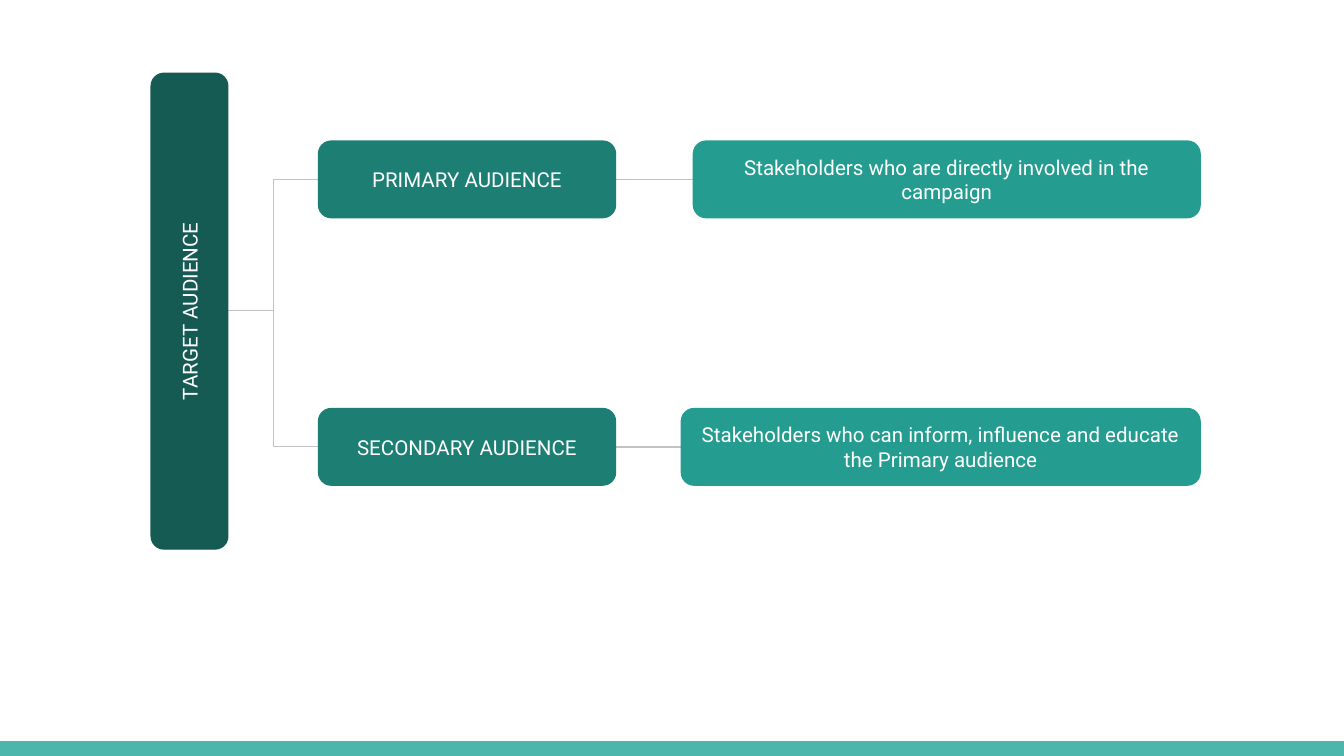
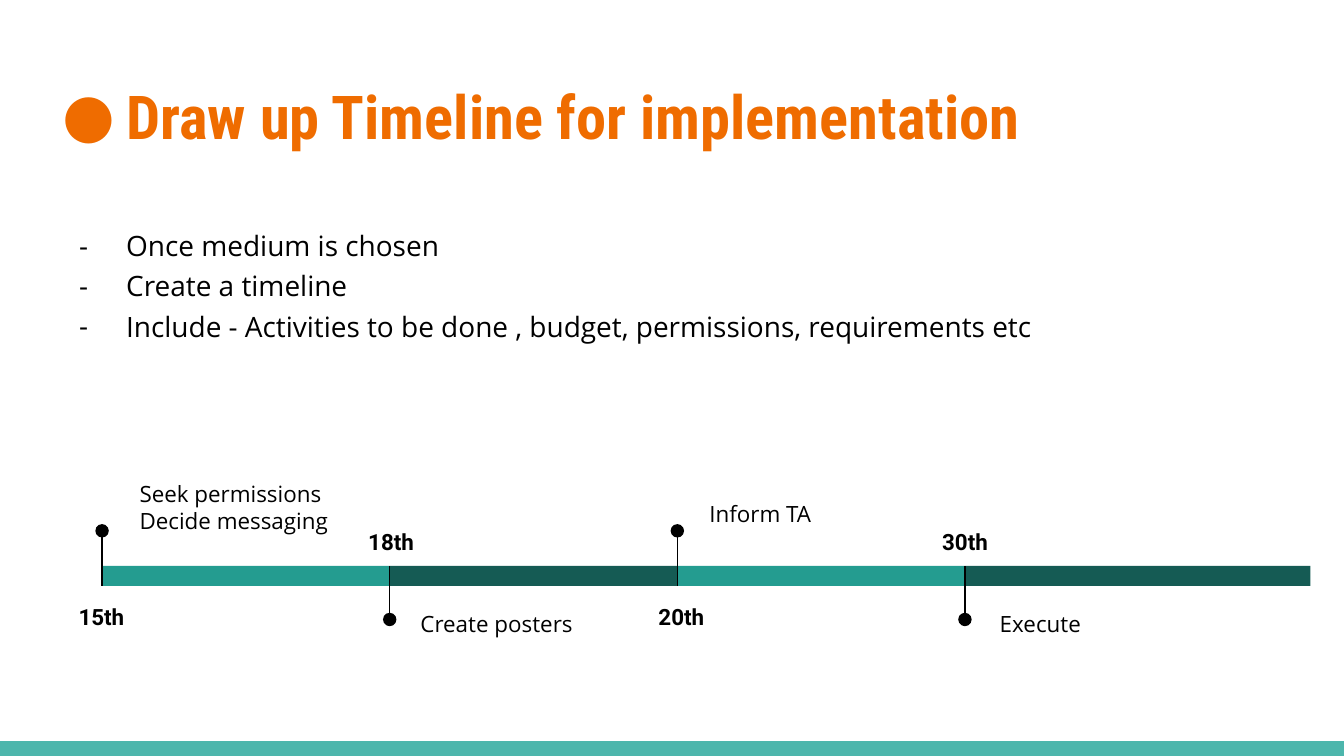
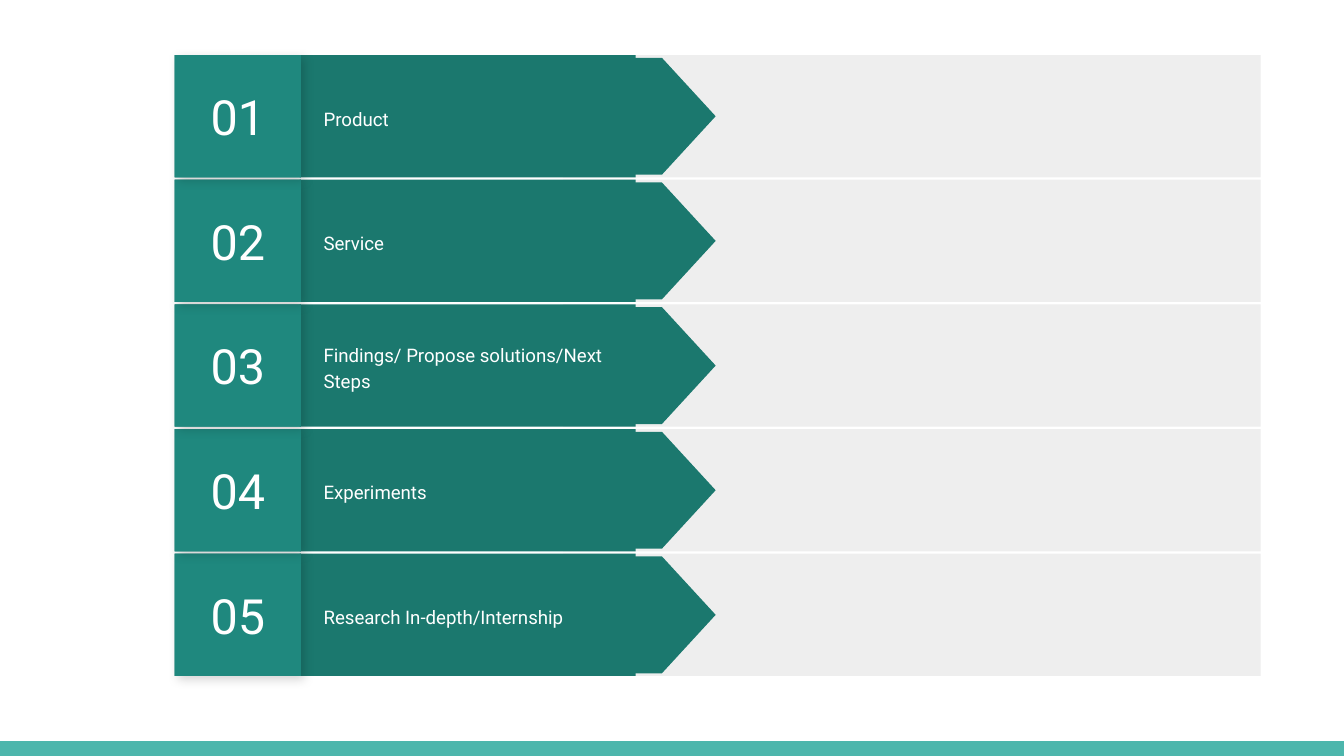
"""Build three campaign slides: audience tree, timeline and numbered steps."""
from lxml import etree
from pptx import Presentation, util as u
from pptx.dml.color import RGBColor
from pptx.enum import shapes, text
from pptx.oxml import ns

ROOT = "TARGET AUDIENCE"
TIERS = [
    ("PRIMARY AUDIENCE", 1.05, "Stakeholders who are directly involved in the campaign", 5.16),
    ("SECONDARY AUDIENCE", 3.04, "Stakeholders who can inform, influence and educate the Primary audience", 5.07),
]
TITLE = "Draw up Timeline for implementation"
POINTS = [
    "Once medium is chosen",
    "Create a timeline",
    "Include - Activities to be done , budget, permissions, requirements etc",
]
DATES = [
    ("15th", (0.28, 4.36, 0.95, 0.41), "Seek permissions\vDecide messaging", (0.94, 3.47, 3.28, 0.61)),
    ("18th", (2.5, 3.8, 0.82, 0.41), "Create posters", (3.03, 4.44, 3.28, 0.4)),
    ("20th", (4.69, 4.36, 0.76, 0.41), "Inform TA", (5.18, 3.62, 3.28, 0.4)),
    ("30th", (6.77, 3.8, 0.82, 0.41), "Execute", (7.34, 4.44, 3.28, 0.4)),
]
STEPS = [
    "Product",
    "Service",
    "Findings/ Propose solutions/Next Steps",
    "Experiments",
    "Research In-depth/Internship",
]


class Theme:
    band, rule = "4DB6AC", "C2C2C2"
    deep, mid, light = "155B54", "1D7E74", "249C90"
    arrow, badge, pale = "1B786E", "1F887E", "EEEEEE"
    accent, ink, white = "EF6C00", "000000", "FFFFFF"
    sans, head, body = "Roboto", "Roboto Condensed", "Open Sans"
    title, point, date, node, step, num = 32.4, 15, 12, 11, 10, 26
    line = 0.75


T = Theme
WIDE, TALL = 10, 10 * 9 / 16
KIND = shapes.MSO_SHAPE
LINK = shapes.MSO_CONNECTOR
LEFT, MID = text.PP_ALIGN.LEFT, text.PP_ALIGN.CENTER
TOP, HALF = text.MSO_ANCHOR.TOP, text.MSO_ANCHOR.MIDDLE


def tag(parent, name, **attrs):
    return etree.SubElement(parent, ns.qn(name), attrs)


def tone(code):
    return RGBColor.from_string(code)


def place(box):
    return [u.Inches(n) for n in box]


def write(shape, lines, size, face=T.sans, color=T.white, align=LEFT,
          anchor=TOP, gap=None, bold=False, mark=None):
    frame = shape.text_frame
    frame.text = "\n".join(lines)
    frame.word_wrap = True
    frame.vertical_anchor = anchor
    frame.margin_left = frame.margin_right = u.Inches(0.1)
    frame.margin_top = frame.margin_bottom = u.Inches(0.1)
    for para in frame.paragraphs:
        para.alignment = align
        if gap:
            para.line_spacing = gap
        if mark:
            bullet(para, *mark, color, face)
        for run in para.runs:
            run.font.size = u.Pt(size)
            run.font.name = face
            run.font.bold = bold
            run.font.color.rgb = tone(color)


def bullet(para, char, hang, color, face):
    props = para._p.get_or_add_pPr()
    props.set("marL", str(u.Inches(0.5)))
    props.set("indent", str(-u.Inches(hang)))
    tag(tag(props, "a:buClr"), "a:srgbClr", val=color)
    tag(props, "a:buFont", typeface=face)
    tag(props, "a:buChar", char=char)


def label(slide, box, lines, size, **look):
    write(slide.shapes.add_textbox(*place(box)), lines, size, **look)


def block(slide, box, fill, kind=KIND.RECTANGLE, edge=False, turn=0):
    shape = slide.shapes.add_shape(kind, *place(box))
    shape.shadow.inherit = False
    shape.rotation = turn
    shape.fill.solid()
    shape.fill.fore_color.rgb = tone(fill)
    if edge:
        shape.line.color.rgb = tone(fill)
        shape.line.width = u.Pt(T.line)
    else:
        shape.line.fill.background()
    return shape


def node(slide, box, fill, words, turn=0):
    shape = block(slide, box, fill, KIND.ROUNDED_RECTANGLE, True, turn)
    write(shape, [words], T.node, align=MID, anchor=HALF)


def link(slide, start, end, color, kind=LINK.STRAIGHT):
    wire = slide.shapes.add_connector(kind, *place(start + end))
    wire.line.color.rgb = tone(color)
    wire.line.width = u.Pt(T.line)
    tag(wire._element.spPr, "a:effectLst")


def shade(shape):
    group = shape._element.spPr.find(ns.qn("a:effectLst"))
    cast = tag(group, "a:outerShdw", blurRad=str(u.Pt(5.6)), dist=str(u.Pt(2.2)),
               dir="2700000", algn="bl", rotWithShape="0")
    tag(tag(cast, "a:srgbClr", val=T.ink), "a:alpha", val="17000")


def page(deck):
    slide = deck.slides.add_slide(deck.slide_layouts[6])
    high = 0.11
    block(slide, (0, TALL - high, WIDE, high), T.band)
    return slide


def tree(slide):
    high, left, wide, edge = 0.57, 2.37, 2.21, 8.93
    for _, top, _, far in TIERS:
        y = top + high / 2
        link(slide, (1.7, 2.31), (left, y), T.rule, LINK.ELBOW)
        link(slide, (far, y), (left + wide, y), T.rule, LINK.ELBOW)
    node(slide, (-0.36, 2.03, 3.54, high), T.deep, ROOT, 270)
    for name, top, note, far in TIERS:
        node(slide, (left, top, wide, high), T.mid, name)
        node(slide, (far, top, edge - far, high), T.light, note)


def timeline(slide):
    label(slide, (0.34, 0.49, 9.32, 0.77), [TITLE], T.title, face=T.head,
          color=T.accent, bold=True, mark=("●", 0.47))
    label(slide, (0.34, 1.55, 9.32, 0.48), POINTS, T.point, face=T.body,
          color=T.ink, gap=1.2, mark=("-", 0.35))
    start, pitch, top, high, dot = 0.76, 2.14, 4.21, 0.15, 0.1
    spots = [start + pitch * i for i in range(len(DATES))]
    for i, (x, end) in enumerate(zip(spots, spots[1:] + [9.75])):
        block(slide, (x, top, end - x, high), T.deep if i % 2 else T.light)
    for i, (x, (date, spot, note, area)) in enumerate(zip(spots, DATES)):
        stem, base, ball = (4.6, top, 4.56) if i % 2 else (3.96, top + high, 3.9)
        link(slide, (x, stem), (x, base), T.ink)
        block(slide, (x - dot / 2, ball, dot, dot), T.ink, KIND.OVAL)
        label(slide, spot, [date], T.date, color=T.ink, align=MID, gap=1.15, bold=True)
        label(slide, area, [note], T.date, face=T.body, color=T.ink)


def steps(slide):
    first, last, high = 0.41, 4.12, 0.91
    pitch = (last - first) / (len(STEPS) - 1)
    for i, name in reversed(list(enumerate(STEPS))):
        top = first + pitch * i
        block(slide, (4.19, top, 5.19, high), T.pale)
        block(slide, (2.23, top, 2.5, high), T.arrow)
        block(slide, (3.89, top + high / 2 - 1, 0.87, 2), T.arrow,
              KIND.FLOWCHART_OFFPAGE_CONNECTOR, turn=270)
        label(slide, (2.31, top + 0.11, 2.63, 0.7), [name], T.step, anchor=HALF, gap=1.15)
        square = (1.3, top, 0.94, high)
        shade(block(slide, square, T.mid))
        write(block(slide, square, T.badge), [f"{i + 1:02}"], T.num, align=MID, anchor=HALF)


def main():
    deck = Presentation()
    deck.slide_width, deck.slide_height = place((WIDE, TALL))
    for draw in (tree, timeline, steps):
        draw(page(deck))
    deck.save("out.pptx")


if __name__ == "__main__":
    main()
